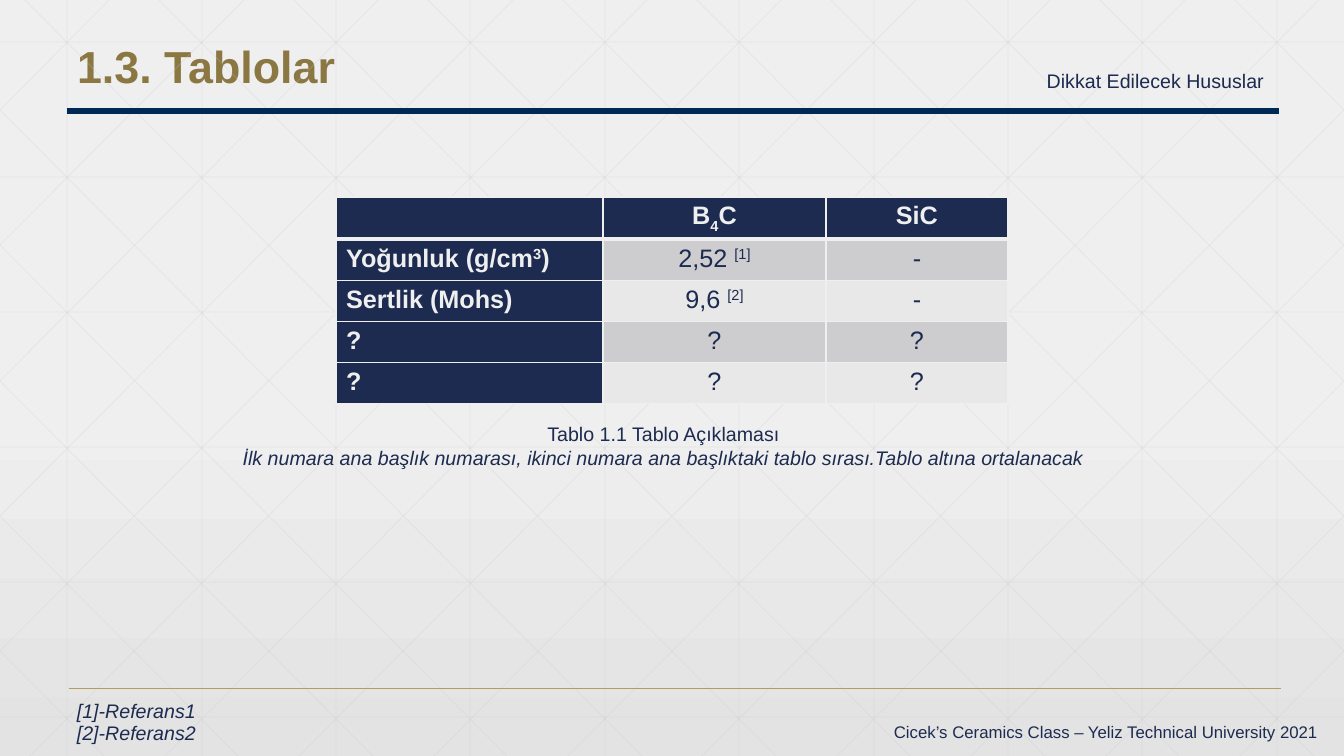
from dataclasses import dataclass

import lxml.etree
import pptx
import pptx.dml.color
import pptx.enum.dml
import pptx.enum.shapes
import pptx.enum.text
import pptx.oxml.ns
import pptx.util

RGBColor = pptx.dml.color.RGBColor
ALIGN = pptx.enum.text.PP_ALIGN
ANCHOR = pptx.enum.text.MSO_ANCHOR
qn = pptx.oxml.ns.qn

WIDTH, HEIGHT = 1344, 756
EMU_PER_PX = 12192000 / WIDTH

NAVY = RGBColor(0x1D, 0x2B, 0x50)
RULE_BLUE = RGBColor(0x00, 0x28, 0x55)
GOLD = RGBColor(0x8A, 0x77, 0x42)
RULE_GOLD = RGBColor(0xB2, 0x9C, 0x5E)
GRID_GREY = RGBColor(0xCB, 0xCB, 0xCB)
PALE = RGBColor(0xEF, 0xEF, 0xEF)
FLOOR_GREY = RGBColor(0xE3, 0xE3, 0xE3)
BANDS = (RGBColor(0xCD, 0xCD, 0xD0), RGBColor(0xE8, 0xE8, 0xE9))


@dataclass(frozen=True)
class Span:
    text: str
    baseline: int = 0  # percent of the text size
    italic: bool = False


@dataclass(frozen=True)
class Rule:
    start: tuple[int, int]
    end: tuple[int, int]
    color: RGBColor = GRID_GREY
    points: float = 0.5
    opacity: int = 100


@dataclass(frozen=True)
class Note:
    frame: tuple[int, int, int, int]
    paragraphs: tuple[Span, ...]
    size: int = 14
    align: ALIGN = ALIGN.LEFT
    anchor: ANCHOR = ANCHOR.TOP
    spacing: float = 1.0


LATTICE_PITCH = 134.4
LATTICE_ROWS = range(42, HEIGHT, 135)
DIAGONAL_START, DIAGONAL_RUN = 25, 751

HEADER_RULES = (
    Rule((67, 111), (1279, 111), RULE_BLUE, 4.5),
    Rule((69, 688), (1281, 688), RULE_GOLD, 0.5),
)
NOTES = (
    Note((67, 697, 1208, 49), (Span("[1]-Referans1\v[2]-Referans2", italic=True),), spacing=0.9),
    Note((67, 417, 1193, 58), (
        Span("Tablo 1.1 Tablo Açıklaması"),
        Span("İlk numara ana başlık numarası, ikinci numara ana başlıktaki tablo "
             "sırası.Tablo altına ortalanacak", italic=True),
    ), align=ALIGN.CENTER),
    Note((1011, 60, 263, 38), (Span("Dikkat Edilecek Hususlar"),),
         align=ALIGN.RIGHT, anchor=ANCHOR.BOTTOM, spacing=0.9),
    Note((884, 717, 460, 30),
         (Span("Cicek’s Ceramics Class – Yeliz Technical University 2021"),), size=12),
)
COLUMN_WIDTHS = (267, 223, 182)
ROW_HEIGHT = 41
TABLE_ROWS = (
    ((), (Span("B"), Span("4", -25), Span("C")), (Span("SiC"),)),
    ((Span("Yoğunluk (g/cm"), Span("3", 30), Span(")")),
     (Span("2,52 "), Span("[1]", 30)), (Span("-"),)),
    ((Span("Sertlik (Mohs)"),), (Span("9,6 "), Span("[2]", 30)), (Span("-"),)),
    *[((Span("?"),),) * 3] * 2,
)


def px(length: float) -> int:
    return round(length * EMU_PER_PX)


def apply(target, values: dict) -> None:
    for name, value in values.items():
        setattr(target, name, value)


def add_span(para, span: Span, size: int, color: RGBColor, bold: bool = False) -> None:
    lines = span.text.split("\v")
    for index, line in enumerate(lines):
        if index:
            para.add_line_break()
        run = para.add_run()
        run.text = line
        apply(run.font, {"name": "Arial", "size": pptx.util.Pt(size),
                         "bold": bold, "italic": span.italic})
        run.font.color.rgb = color
        if span.baseline:
            run._r.get_or_add_rPr().set("baseline", str(span.baseline * 1000))


def paint_background(page) -> None:
    """Vertical gradient that darkens below the middle."""
    fill = page.background.fill
    fill.gradient()
    fill.gradient_angle = 270
    stops = page.element.find(".//" + qn("a:gsLst"))
    stops.clear()
    for position, color, opacity in ((0, PALE, 100), (53, PALE, 100), (100, FLOOR_GREY, 65)):
        stop = lxml.etree.SubElement(stops, qn("a:gs"), pos=str(position * 1000))
        tint = lxml.etree.SubElement(stop, qn("a:srgbClr"), val=str(color))
        if opacity < 100:
            lxml.etree.SubElement(tint, qn("a:alpha"), val=str(opacity * 1000))


def add_rule(page, rule: Rule) -> None:
    line = page.shapes.add_connector(
        pptx.enum.shapes.MSO_CONNECTOR.STRAIGHT, *map(px, rule.start + rule.end))
    line.line.color.rgb = rule.color
    line.line.width = pptx.util.Pt(rule.points)
    properties = line.element.spPr
    lxml.etree.SubElement(properties, qn("a:effectLst"))
    if rule.opacity < 100:
        tint = properties.find(".//" + qn("a:srgbClr"))
        lxml.etree.SubElement(tint, qn("a:alpha"), val=str(rule.opacity * 1000))


def lattice_rules() -> list[Rule]:
    """Upright, level and mirrored diagonal lines, clipped to the page."""
    ends = []
    for index in range(10):
        x = round(67.2 + LATTICE_PITCH * index)
        ends.append(((x, 0), (x, HEIGHT)))
    ends += [((0, y), (WIDTH, y)) for y in LATTICE_ROWS]
    slope = HEIGHT / DIAGONAL_RUN
    for index in range(-5, 10):
        origin = DIAGONAL_START + LATTICE_PITCH * index
        left, right = max(origin, 0), min(origin + DIAGONAL_RUN, WIDTH)
        top, bottom = (round((x - origin) * slope) for x in (left, right))
        left, right = round(left), round(right)
        ends.append(((left, top), (right, bottom)))
        ends.append(((WIDTH - left, top), (WIDTH - right, bottom)))
    return [Rule(start, end, opacity=30) for start, end in ends]


def place_title(page) -> None:
    title = page.shapes.title
    apply(title, {"left": px(67), "top": px(12), "width": px(1002), "height": px(86)})
    apply(title.text_frame, {"vertical_anchor": ANCHOR.BOTTOM, "word_wrap": True,
                             "auto_size": pptx.enum.text.MSO_AUTO_SIZE.NONE})
    para = title.text_frame.paragraphs[0]
    apply(para, {"alignment": ALIGN.LEFT, "line_spacing": 0.9})
    add_span(para, Span("1.3. Tablolar"), 32, GOLD, bold=True)


def add_note(page, note: Note) -> None:
    box = page.shapes.add_textbox(*map(px, note.frame))
    apply(box.text_frame, {"word_wrap": True, "vertical_anchor": note.anchor})
    for index, span in enumerate(note.paragraphs):
        para = box.text_frame.add_paragraph() if index else box.text_frame.paragraphs[0]
        apply(para, {"alignment": note.align, "line_spacing": note.spacing})
        add_span(para, span, note.size, NAVY)


def add_borders(cell, row: int) -> None:
    """Thin pale borders, with a thick one under the header row."""
    thick_side = {0: "B", 1: "T"}.get(row)
    properties = cell._tc.get_or_add_tcPr()
    for index, side in enumerate("LRTB"):
        points = 3 if side == thick_side else 1
        border = lxml.etree.Element(qn(f"a:ln{side}"), w=str(pptx.util.Pt(points)))
        fill = lxml.etree.SubElement(border, qn("a:solidFill"))
        lxml.etree.SubElement(fill, qn("a:srgbClr"), val=str(PALE))
        properties.insert(index, border)


def add_property_table(page) -> None:
    table = page.shapes.add_table(
        len(TABLE_ROWS), len(COLUMN_WIDTHS), px(336), px(197),
        px(sum(COLUMN_WIDTHS)), px(ROW_HEIGHT * len(TABLE_ROWS))).table
    for column, width in zip(table.columns, COLUMN_WIDTHS):
        column.width = px(width)
    for row, contents in enumerate(TABLE_ROWS):
        table.rows[row].height = px(ROW_HEIGHT)
        for column, spans in enumerate(contents):
            cell = table.cell(row, column)
            heading = row == 0 or column == 0
            cell.fill.solid()
            cell.fill.fore_color.rgb = NAVY if heading else BANDS[(row - 1) % 2]
            add_borders(cell, row)
            para = cell.text_frame.paragraphs[0]
            para.alignment = ALIGN.CENTER if column else ALIGN.LEFT
            for span in spans:
                add_span(para, span, 18, PALE if heading else NAVY, bold=heading)


def main() -> None:
    deck = pptx.Presentation()
    apply(deck, {"slide_width": px(WIDTH), "slide_height": px(HEIGHT)})
    page = deck.slides.add_slide(deck.slide_layouts.get_by_name("Title Only"))
    paint_background(page)
    for rule in (*lattice_rules(), *HEADER_RULES):
        add_rule(page, rule)
    place_title(page)
    add_property_table(page)
    for note in NOTES:
        add_note(page, note)
    deck.save("out.pptx")


if __name__ == "__main__":
    main()
